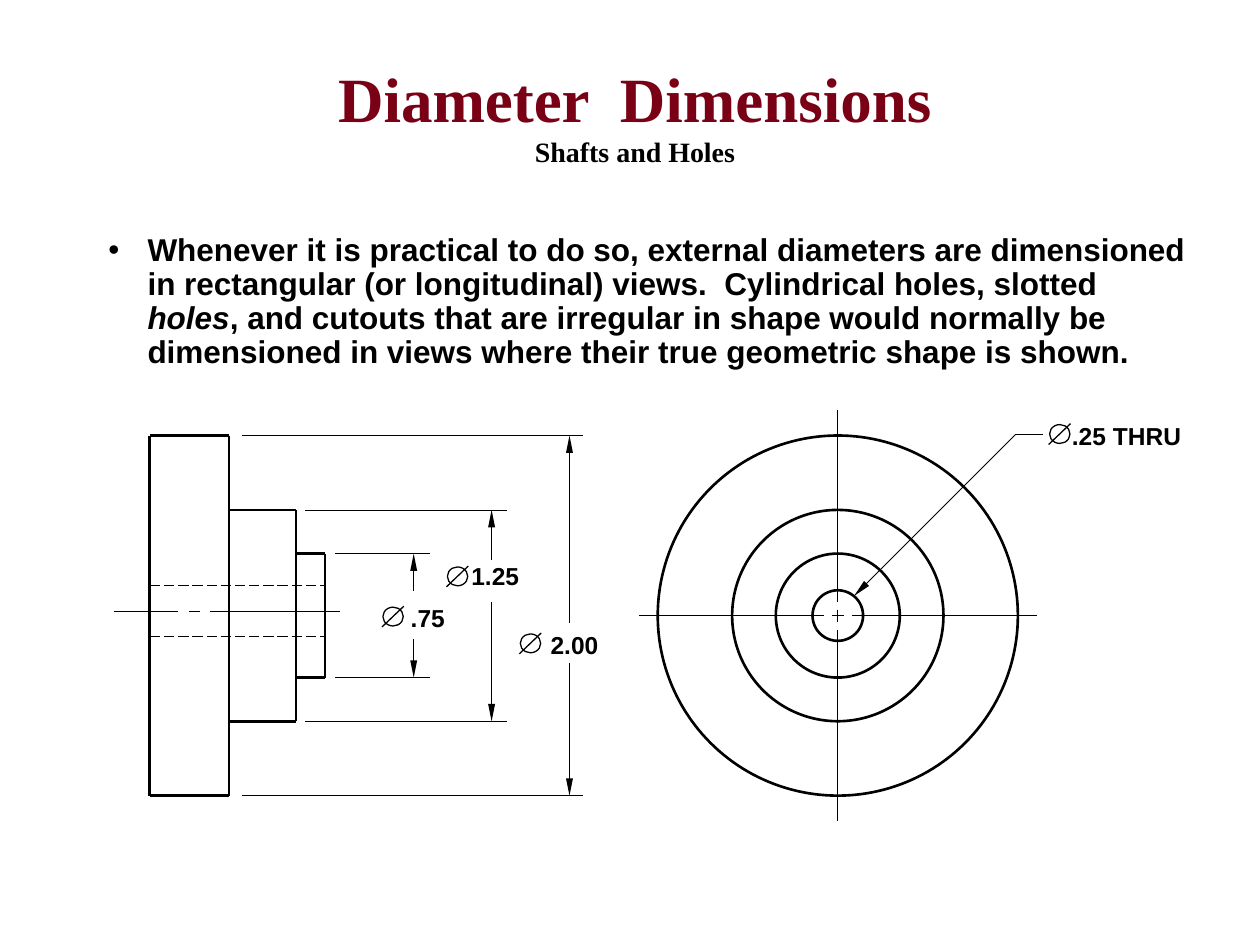
from lxml import etree
from pptx import Presentation
from pptx.dml.color import RGBColor
from pptx.enum.dml import MSO_LINE
from pptx.enum.shapes import MSO_CONNECTOR, MSO_SHAPE
from pptx.enum.text import MSO_ANCHOR, MSO_AUTO_SIZE, PP_ALIGN
from pptx.oxml.ns import qn
from pptx.util import Cm, Pt

STRAIGHT = MSO_CONNECTOR.STRAIGHT
OVAL = MSO_SHAPE.OVAL
LONG_DASH = MSO_LINE.LONG_DASH
TOP, MIDDLE = MSO_ANCHOR.TOP, MSO_ANCHOR.MIDDLE
CENTER, LEFT = PP_ALIGN.CENTER, PP_ALIGN.LEFT
NO_AUTOFIT = MSO_AUTO_SIZE.NONE

BLACK, MAROON = "000000", "790015"
THICK, MEDIUM, THIN = 1.5, 0.75, 0.5

# Both views share the same height axis and radii (cm)
AXIS_Y = 12.41
CENTER_X = 16.89
OUTER, HUB, BOSS, HOLE = 3.63, 2.13, 1.25, 0.51


def color(value):
    return RGBColor.from_string(value)


def add_run(paragraph, text, size, font_name, fill=BLACK, italic=False):
    run = paragraph.add_run()
    run.text = text
    font = run.font
    font.size, font.name = Pt(size), font_name
    font.bold, font.italic = True, italic
    font.color.rgb = color(fill)


def add_line(slide, start, end, width, dash=None, arrow=False):
    """Straight line; the arrowhead, if any, is at the start."""
    line = slide.shapes.add_connector(STRAIGHT, *(Cm(v) for v in (*start, *end)))
    line.line.color.rgb = color(BLACK)
    line.line.width = Pt(width)
    if dash:
        line.line.dash_style = dash
    properties = line._element.spPr
    if arrow:
        etree.SubElement(properties.find(qn("a:ln")), qn("a:headEnd"),
                         type="triangle", w="sm", len="lg")
    etree.SubElement(properties, qn("a:effectLst"))


def add_ellipse(slide, left, top, width, height, line_width):
    ellipse = slide.shapes.add_shape(OVAL, Cm(left), Cm(top), Cm(width), Cm(height))
    ellipse.shadow.inherit = False
    ellipse.fill.background()
    ellipse.line.color.rgb = color(BLACK)
    ellipse.line.width = Pt(line_width)


def add_diameter_symbol(slide, left, top):
    add_ellipse(slide, left, top, 0.41, 0.38, MEDIUM)
    add_line(slide, (left + 0.42, top - 0.02), (left - 0.02, top + 0.4), MEDIUM)


def add_label(slide, text, left, top, width, align=CENTER):
    box = slide.shapes.add_textbox(Cm(left), Cm(top), Cm(width), Cm(0.84))
    frame = box.text_frame
    frame.word_wrap = True
    frame.vertical_anchor = MIDDLE
    frame.paragraphs[0].alignment = align
    add_run(frame.paragraphs[0], text, 14, "Arial")


def place(shape, left, top, width, height):
    shape.left, shape.top = Cm(left), Cm(top)
    shape.width, shape.height = Cm(width), Cm(height)
    shape.text_frame.auto_size = NO_AUTOFIT
    shape.text_frame.vertical_anchor = TOP


def fill_title(title):
    place(title, 6.55, 1.07, 12.5, 2.54)
    frame = title.text_frame
    frame.word_wrap = False
    heading, subtitle = frame.paragraphs[0], frame.add_paragraph()
    add_run(heading, "Diameter  Dimensions", 36, "Times New Roman", MAROON)
    add_run(subtitle, "Shafts and Holes", 16, "Times New Roman")
    for paragraph in (heading, subtitle):
        paragraph.alignment = CENTER
        paragraph.space_before = Pt(0)


def fill_body(body):
    place(body, 1.93, 4.6, 22.25, 3.43)
    paragraph = body.text_frame.paragraphs[0]
    properties = paragraph._p.get_or_add_pPr()
    properties.set("marL", str(Cm(0.79)))
    properties.set("indent", str(Cm(-0.79)))
    etree.SubElement(properties, qn("a:buChar"), char="•")
    paragraph.line_spacing = 0.9
    paragraph.space_before = Pt(0)
    add_run(paragraph, "Whenever it is practical to do so, external diameters are "
            "dimensioned in rectangular (or longitudinal) views.  Cylindrical "
            "holes, slotted ", 18, "Arial")
    add_run(paragraph, "holes", 18, "Arial", italic=True)
    add_run(paragraph, ", and cutouts that are irregular in shape would normally be "
            "dimensioned in views where their true geometric shape is shown.",
            18, "Arial")


def draw_longitudinal_view(slide):
    # Stepped outline: left, right, radius
    for left, right, radius in ((3.02, 4.62, OUTER), (4.62, 5.97, HUB),
                                (5.97, 6.55, BOSS)):
        top, bottom = AXIS_Y - radius, AXIS_Y + radius
        for y in (top, bottom):
            add_line(slide, (left, y), (right, y), THICK)
        add_line(slide, (right, top), (right, bottom), THICK)
    add_line(slide, (3.02, AXIS_Y - OUTER), (3.02, AXIS_Y + OUTER), THICK)
    # Center line and hidden hole edges
    for start, end in ((2.29, 3.58), (3.81, 4.04), (4.24, 6.86)):
        add_line(slide, (start, 12.32), (end, 12.32), MEDIUM)
    for y in (12.32 - HOLE, 12.32 + HOLE):
        add_line(slide, (3.02, y), (6.55, y), MEDIUM, dash=LONG_DASH)


def draw_dimension(slide, radius, extension, x, gap):
    """Two extension lines and a dimension line left open for its label."""
    for y, gap_end in zip((AXIS_Y - radius, AXIS_Y + radius), gap):
        add_line(slide, (extension[0], y), (extension[1], y), THIN)
        add_line(slide, (x, y), (x, gap_end), MEDIUM, arrow=True)


def draw_circular_view(slide):
    for radius in (OUTER, HUB, BOSS, HOLE):
        add_ellipse(slide, CENTER_X - radius, AXIS_Y - radius,
                    2 * radius, 2 * radius, THICK)
    # Center lines, broken around the center mark
    for reach, dx, dy in ((4.01, 1, 0), (4.15, 0, 1)):
        for start, end in ((-reach, -0.28), (-0.12, 0.12), (0.28, reach)):
            add_line(slide, (CENTER_X + dx * start, AXIS_Y + dy * start),
                     (CENTER_X + dx * end, AXIS_Y + dy * end), THIN)
    # Leader to the hole
    add_line(slide, (17.22, 12.01), (20.47, 8.76), THIN, arrow=True)
    add_line(slide, (20.47, 8.76), (21.03, 8.76), THIN)


def main():
    presentation = Presentation()
    presentation.slide_width, presentation.slide_height = Cm(25.4), Cm(19.05)
    slide = presentation.slides.add_slide(presentation.slide_layouts[1])
    fill_title(slide.shapes.title)
    fill_body(slide.placeholders[1])

    draw_longitudinal_view(slide)
    draw_dimension(slide, OUTER, (4.88, 11.75), 11.48, (12.55, 13.36))
    draw_dimension(slide, HUB, (6.15, 10.22), 9.91, (11.28, 12.14))
    draw_dimension(slide, BOSS, (6.75, 8.67), 8.34, (11.91, 12.88))
    draw_circular_view(slide)

    # Diameter labels
    for left, top in ((10.49, 12.78), (9.02, 11.43), (7.72, 12.24), (21.16, 8.56)):
        add_diameter_symbol(slide, left, top)
    add_label(slide, ".75", 7.93, 12.04, 1.39)
    add_label(slide, "1.25", 9.15, 11.18, 1.67)
    add_label(slide, "2.00", 10.85, 12.57, 1.67, LEFT)
    add_label(slide, ".25 THRU", 21.36, 8.37, 3, LEFT)
    presentation.save("out.pptx")


if __name__ == "__main__":
    main()
